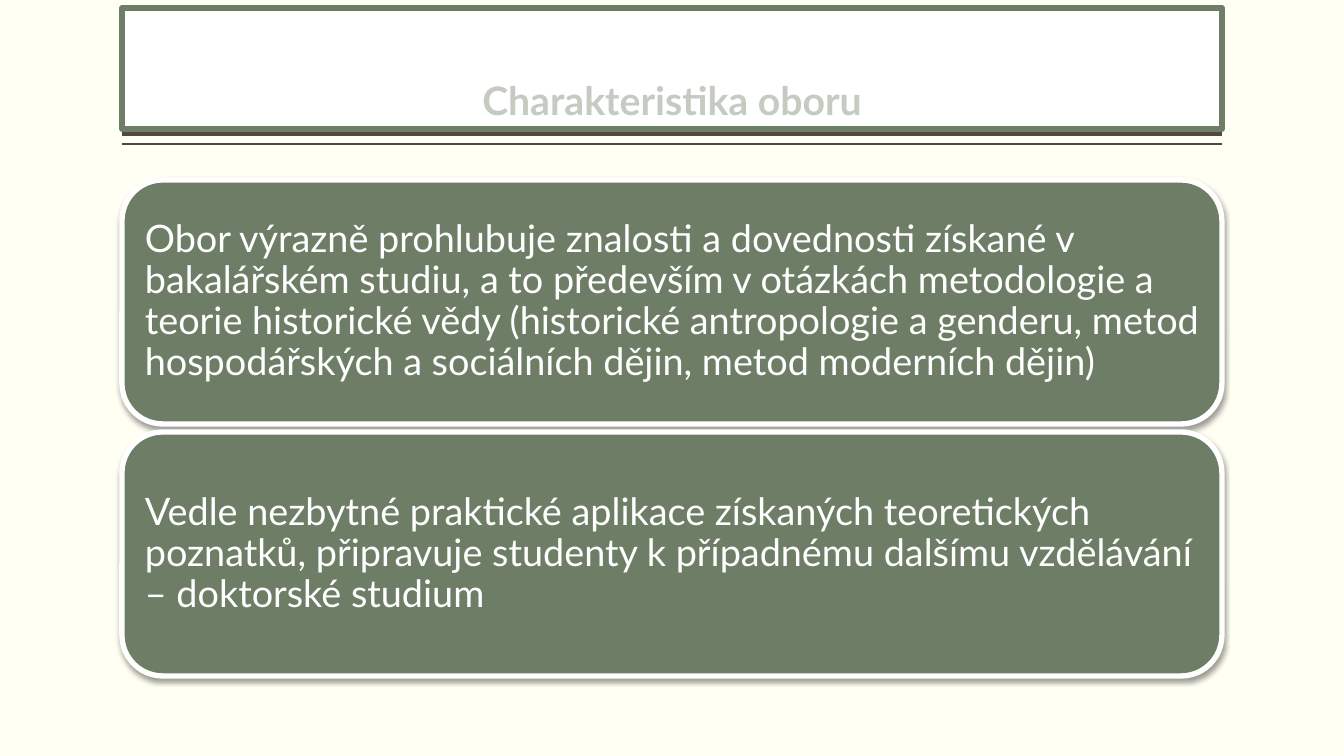
"""Build the slide that describes the field of study."""
from lxml import etree
from pptx import Presentation
from pptx.dml.color import RGBColor
from pptx.enum.shapes import MSO_CONNECTOR, MSO_SHAPE
from pptx.enum.text import MSO_ANCHOR, MSO_AUTO_SIZE, PP_ALIGN
from pptx.oxml import parse_xml
from pptx.oxml.ns import qn
from pptx.util import Pt

LINE = MSO_CONNECTOR.STRAIGHT
ROUND = MSO_SHAPE.ROUNDED_RECTANGLE
LEFT, CENTER = PP_ALIGN.LEFT, PP_ALIGN.CENTER
MIDDLE, BOTTOM = MSO_ANCHOR.MIDDLE, MSO_ANCHOR.BOTTOM
NO_FIT = MSO_AUTO_SIZE.NONE

CREAM = RGBColor(0xFF, 0xFF, 0xF3)
WHITE = RGBColor(0xFF, 0xFF, 0xFF)
GREEN = RGBColor(0x6D, 0x7D, 0x66)
PALE = RGBColor(0xC4, 0xCC, 0xC1)
BROWN = RGBColor(0x51, 0x48, 0x43)

WIDE, HIGH = 1344, 756
SCALE = 12192000 / WIDE
X, W = 122, 1100
CARD_TOP, CARD_H, STEP = 180, 244, 252

NS = 'xmlns:a="http://schemas.openxmlformats.org/drawingml/2006/main"'
SHADOW = (f'<a:effectLst {NS}><a:outerShdw blurRad="44450" dist="25400" '
          'dir="5400000" rotWithShape="0"><a:srgbClr val="000000">'
          '<a:alpha val="38000"/></a:srgbClr></a:outerShdw></a:effectLst>')
OUTLINE = (f'<a:ln {NS} w="22225"><a:solidFill>'
           f'<a:srgbClr val="{GREEN}"/></a:solidFill></a:ln>')

CARDS = [
    "Obor výrazně prohlubuje znalosti a dovednosti získané v bakalářském "
    "studiu, a to především v otázkách metodologie a teorie historické vědy "
    "(historické antropologie a genderu, metod hospodářských a sociálních "
    "dějin, metod moderních dějin)",
    "Vedle nezbytné praktické aplikace získaných teoretických poznatků, "
    "připravuje studenty k případnému dalšímu vzdělávání – doktorské studium",
]


def px(n):
    """Turn px into EMU."""
    return round(n * SCALE)


def dress(shape, fill, edge, width, text, size, color, align, anchor, pads):
    """Style a shape and write its text; return the run."""
    shape.fill.solid()
    shape.fill.fore_color.rgb = fill
    shape.line.color.rgb = edge
    shape.line.width = Pt(width)
    frame = shape.text_frame
    frame.word_wrap = True
    frame.auto_size = NO_FIT
    frame.vertical_anchor = anchor
    frame.margin_left = frame.margin_right = px(pads[0])
    frame.margin_top = frame.margin_bottom = px(pads[1])
    para = frame.paragraphs[0]
    para.alignment = align
    para.line_spacing = 0.9
    run = para.add_run()
    run.text = text
    run.font.size = Pt(size)
    run.font.name = "Lato"
    run.font.color.rgb = color
    return run


deck = Presentation()
deck.slide_width, deck.slide_height = px(WIDE), px(HIGH)
slide = deck.slides.add_slide(deck.slide_layouts[5])
slide.background.fill.solid()
slide.background.fill.fore_color.rgb = CREAM

for y, width in ((134, 3), (144, 1)):
    rule = slide.shapes.add_connector(LINE, px(X + W), px(y), px(X), px(y))
    rule.line.color.rgb = BROWN
    rule.line.width = Pt(width)
    etree.SubElement(rule._element.spPr, qn("a:effectLst"))

title = slide.shapes.title
title.left, title.top = px(X), px(8)
title.width, title.height = px(W), px(121)
run = dress(title, WHITE, GREEN, 3.78, "Charakteristika oboru", 28, PALE,
            CENTER, BOTTOM, (0, 5))
run.font.bold = True
run.font._element.insert(0, parse_xml(OUTLINE))

for i, text in enumerate(CARDS):
    card = slide.shapes.add_shape(ROUND, px(X), px(CARD_TOP + i * STEP),
                                  px(W), px(CARD_H))
    dress(card, GREEN, WHITE, 3.82, text, 27, WHITE, LEFT, MIDDLE, (11, 11))
    card._element.spPr.append(parse_xml(SHADOW))

deck.save("out.pptx")
